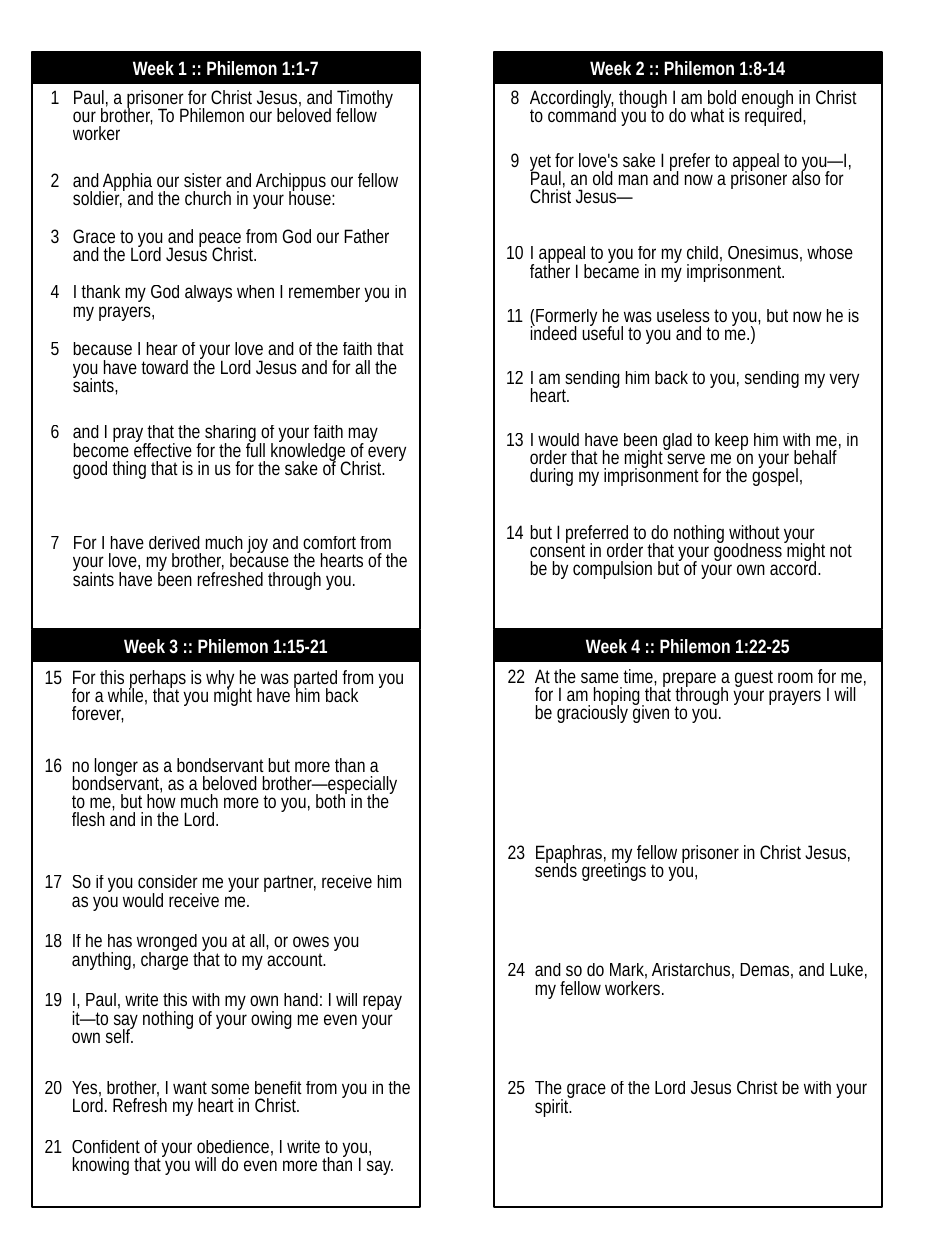
from pptx import Presentation
from pptx.dml.color import RGBColor
from pptx.enum.shapes import MSO_SHAPE
from pptx.enum.text import MSO_ANCHOR, PP_ALIGN
from pptx.util import Pt

PX = 914400 // 126
BLACK = RGBColor(0, 0, 0)
WHITE = RGBColor(255, 255, 255)
FONT = "Arial Narrow"
SIZE = Pt(11)

COLUMN_LEFTS = (32, 494)
ROW_TOPS = (52, 630)
FRAME_WIDTH, FRAME_HEIGHT, HEADER_HEIGHT = 388, 577, 32
CELL_INSET = 1

# Each week: heading, table left and top, column widths, (row height, verse).
WEEKS = [
    ("Week 1 :: Philemon 1:1-7", (38, 89), (34, 343), [
        (83, "Paul, a prisoner for Christ Jesus, and Timothy our brother, To Philemon our beloved fellow worker"),
        (56, "and Apphia our sister and Archippus our fellow soldier, and the church in your house:"),
        (56, "Grace to you and peace from God our Father and the Lord Jesus Christ."),
        (57, "I thank my God always when I remember you in my prayers,"),
        (83, "because I hear of your love and of the faith that you have toward the Lord Jesus and for all the saints,"),
        (111, "and I pray that the sharing of your faith may become effective for the full knowledge of every good thing that is in us for the sake of Christ."),
        (83, "For I have derived much joy and comfort from your love, my brother, because the hearts of the saints have been refreshed through you."),
    ]),
    ("Week 2 :: Philemon 1:8-14", (501, 89), (28, 345), [
        (63, "Accordingly, though I am bold enough in Christ to command you to do what is required,"),
        (93, "yet for love's sake I prefer to appeal to you—I, Paul, an old man and now a prisoner also for Christ Jesus—"),
        (63, "I appeal to you for my child, Onesimus, whose father I became in my imprisonment."),
        (62, "(Formerly he was useless to you, but now he is indeed useful to you and to me.)"),
        (62, "I am sending him back to you, sending my very heart."),
        (93, "I would have been glad to keep him with me, in order that he might serve me on your behalf during my imprisonment for the gospel,"),
        (93, "but I preferred to do nothing without your consent in order that your goodness might not be by compulsion but of your own accord."),
    ]),
    ("Week 3 :: Philemon 1:15-21", (36, 669), (35, 343), [
        (88, "For this perhaps is why he was parted from you for a while, that you might have him back forever,"),
        (117, "no longer as a bondservant but more than a bondservant, as a beloved brother—especially to me, but how much more to you, both in the flesh and in the Lord."),
        (59, "So if you consider me your partner, receive him as you would receive me."),
        (59, "If he has wronged you at all, or owes you anything, charge that to my account."),
        (88, "I, Paul, write this with my own hand: I will repay it—to say nothing of your owing me even your own self."),
        (59, "Yes, brother, I want some benefit from you in the Lord. Refresh my heart in Christ."),
        (59, "Confident of your obedience, I write to you, knowing that you will do even more than I say."),
    ]),
    ("Week 4 :: Philemon 1:22-25", (499, 668), (35, 343), [
        (176, "At the same time, prepare a guest room for me, for I am hoping that through your prayers I will be graciously given to you."),
        (118, "Epaphras, my fellow prisoner in Christ Jesus, sends greetings to you,"),
        (118, "and so do Mark, Aristarchus, Demas, and Luke, my fellow workers."),
        (118, "The grace of the Lord Jesus Christ be with your spirit."),
    ]),
]


def write(frame, text, color, align, bold=False):
    para = frame.paragraphs[0]
    para.text = text
    para.alignment = align
    para.font.name = FONT
    para.font.size = SIZE
    para.font.bold = bold
    para.font.color.rgb = color


def add_box(page, left, top, height):
    box = page.shapes.add_shape(
        MSO_SHAPE.RECTANGLE, left * PX, top * PX, FRAME_WIDTH * PX, height * PX)
    box.shadow.inherit = False
    return box


def add_week_frame(page, left, top, heading):
    border = add_box(page, left, top, FRAME_HEIGHT)
    border.fill.background()
    border.line.color.rgb = BLACK
    border.line.width = Pt(0.75)

    header = add_box(page, left, top, HEADER_HEIGHT)
    header.fill.solid()
    header.fill.fore_color.rgb = BLACK
    header.line.fill.background()
    header.text_frame.vertical_anchor = MSO_ANCHOR.MIDDLE
    write(header.text_frame, heading, WHITE, PP_ALIGN.CENTER, bold=True)


def add_verse_table(page, position, widths, verses, first_number):
    left, top = position
    height = sum(row_height for row_height, _ in verses)
    table = page.shapes.add_table(
        len(verses), len(widths), left * PX, top * PX, sum(widths) * PX, height * PX).table
    table.first_row = False
    table.horz_banding = False
    for column, width in zip(table.columns, widths):
        column.width = width * PX
    for index, (row_height, verse) in enumerate(verses):
        row = table.rows[index]
        row.height = row_height * PX
        entries = ((str(first_number + index), PP_ALIGN.CENTER), (verse, PP_ALIGN.LEFT))
        for cell, (text, align) in zip(row.cells, entries):
            cell.fill.background()
            cell.margin_left = cell.margin_right = cell.margin_top = CELL_INSET * PX
            cell.margin_bottom = 0
            write(cell.text_frame, text, BLACK, align)


def main():
    deck = Presentation()
    deck.slide_width = 945 * PX
    deck.slide_height = 1260 * PX
    page = deck.slides.add_slide(deck.slide_layouts[6])
    number = 1
    for index, (heading, position, widths, verses) in enumerate(WEEKS):
        row, column = divmod(index, len(COLUMN_LEFTS))
        add_week_frame(page, COLUMN_LEFTS[column], ROW_TOPS[row], heading)
        add_verse_table(page, position, widths, verses, number)
        number += len(verses)
    deck.save("out.pptx")


if __name__ == "__main__":
    main()
